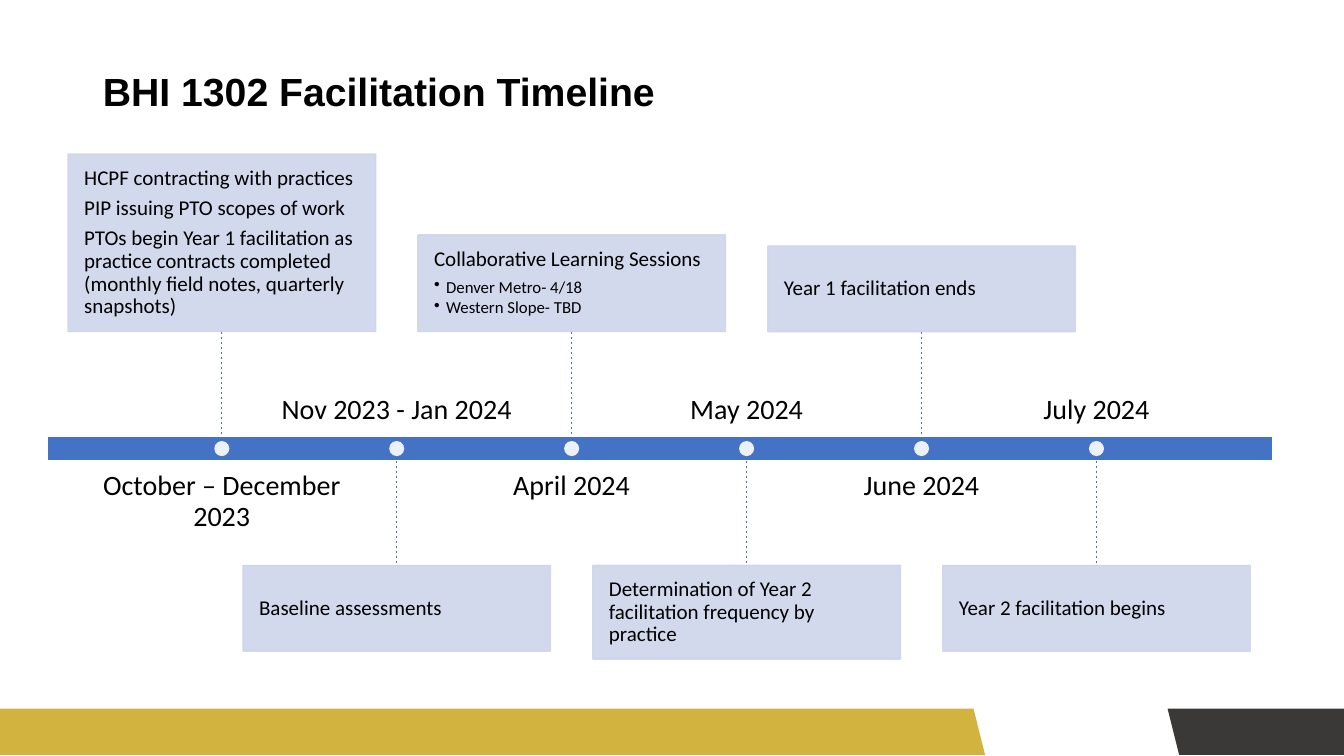
"""Build the BHI 1302 facilitation timeline slide."""
from dataclasses import dataclass

from lxml.etree import SubElement
from pptx import Presentation
from pptx.dml.color import RGBColor as RGB
from pptx.enum.dml import MSO_LINE
from pptx.enum.shapes import MSO_CONNECTOR, MSO_SHAPE as SHAPE
from pptx.enum.text import MSO_ANCHOR as ANCHOR, PP_ALIGN as ALIGN
from pptx.oxml.ns import qn
from pptx.util import Inches, Pt


@dataclass(frozen=True)
class Theme:
    blue: RGB = RGB(0x44, 0x72, 0xC4)
    pale: RGB = RGB(0xCF, 0xD5, 0xEA)
    gold: RGB = RGB(0xD2, 0xB3, 0x3F)
    dark: RGB = RGB(0x3B, 0x38, 0x38)
    white: RGB = RGB(0xFF, 0xFF, 0xFF)
    black: RGB = RGB(0, 0, 0)
    head: str = "Arial"
    body: str = "Calibri"
    title: int = 28
    date: int = 20
    item: int = 15
    bullet: int = 12


def add_block(kind, x, y, w, h, color, line=None, alpha=None):
    sp = s.shapes.add_shape(kind, Inches(x), Inches(y), Inches(w), Inches(h))
    sp.shadow.inherit = False
    sp.fill.solid()
    sp.fill.fore_color.rgb = color
    if line is None:
        sp.line.fill.background()
    else:
        sp.line.color.rgb = line
        sp.line.width = Pt(1)
    if alpha:
        for clr in sp._element.spPr.iter(qn("a:srgbClr")):
            SubElement(clr, qn("a:alpha"), val=str(alpha * 1000))
    return sp


def write(sp, paragraphs, anchor, align, inset=0):
    tf = sp.text_frame
    tf.word_wrap = True
    tf.vertical_anchor = anchor
    tf.margin_left = tf.margin_right = tf.margin_top = tf.margin_bottom = Inches(inset)
    for i, (text, size) in enumerate(paragraphs):
        p = tf.paragraphs[0] if i == 0 else tf.add_paragraph()
        share = 0.35
        if size == T.bullet:
            share = 0.15
            p.level = 1
            pPr = p._p.get_or_add_pPr()
            pPr.set("marL", str(Inches(0.12)))
            pPr.set("indent", str(-Inches(0.12)))
            SubElement(pPr, qn("a:buChar"), char="•")
        p.alignment = align
        p.line_spacing = 0.9
        p.space_after = Pt(size * share)
        r = p.add_run()
        r.text = text
        r.font.size = Pt(size)
        r.font.name = T.body
        r.font.color.rgb = T.black


T = Theme()
prs = Presentation()
prs.slide_width, prs.slide_height = Inches(13.33), Inches(7.5)
s = prs.slides.add_slide(prs.slide_layouts[5])

for x, w, color in ((-0.35, 10.12, T.gold), (11.58, 2.13, T.dark)):
    sp = add_block(SHAPE.PARALLELOGRAM, x, 7.03, w, 0.46, color)
    sp._element.spPr.xfrm.set("flipV", "1")

title = s.shapes.title
title.left, title.top, title.width, title.height = map(Inches, (0.92, 0.4, 11.5, 1.06))
tf = title.text_frame
tf.vertical_anchor = ANCHOR.MIDDLE
p = tf.paragraphs[0]
p.alignment = ALIGN.LEFT
p.line_spacing = 0.9
r = p.add_run()
r.text = "BHI 1302 Facilitation Timeline"
r.font.size = Pt(T.title)
r.font.name = T.head
r.font.bold = True
r.font.color.rgb = T.black

FIRST, COL = 2.2, 1.735
BAR_TOP, BAR_H = 4.33, 0.24
BAR_END = BAR_TOP + BAR_H
STEM, BOX_W, DATE_W, DATE_H, DATE_GAP, DOT = 1.04, 3.05, 2.78, 0.69, 0.11, 0.15

add_block(SHAPE.RECTANGLE, 0.47, BAR_TOP, 12.15, BAR_H, T.blue, T.white)

events = [
    ("October – December 2023", 1.76, [
        ("HCPF contracting with practices", T.item),
        ("PIP issuing PTO scopes of work", T.item),
        ("PTOs begin Year 1 facilitation as practice contracts completed "
         "(monthly field notes, quarterly snapshots)", T.item)]),
    ("Nov 2023 - Jan 2024", 0.85, [("Baseline assessments", T.item)]),
    ("April 2024", 0.96, [
        ("Collaborative Learning Sessions", T.item),
        ("Denver Metro- 4/18", T.bullet),
        ("Western Slope- TBD", T.bullet)]),
    ("May 2024", 0.93, [
        ("Determination of Year 2 facilitation frequency by practice", T.item)]),
    ("June 2024", 0.85, [("Year 1 facilitation ends", T.item)]),
    ("July 2024", 0.85, [("Year 2 facilitation begins", T.item)]),
]

for i, (date, box_h, items) in enumerate(events):
    cx = FIRST + i * COL
    if i % 2 == 0:
        stem_top, box_top = BAR_TOP - STEM, BAR_TOP - STEM - box_h
        date_top, date_anchor = BAR_END + DATE_GAP, ANCHOR.TOP
    else:
        stem_top, box_top = BAR_END, BAR_END + STEM
        date_top, date_anchor = BAR_TOP - DATE_GAP - DATE_H, ANCHOR.BOTTOM

    label = s.shapes.add_textbox(Inches(cx - DATE_W / 2), Inches(date_top),
                                 Inches(DATE_W), Inches(DATE_H))
    write(label, [(date, T.date)], date_anchor, ALIGN.CENTER)

    box = add_block(SHAPE.RECTANGLE, cx - BOX_W / 2, box_top, BOX_W, box_h,
                    T.pale, T.pale, 90)
    write(box, items, ANCHOR.MIDDLE, ALIGN.LEFT, 0.16)

    stem = s.shapes.add_connector(MSO_CONNECTOR.STRAIGHT, Inches(cx), Inches(stem_top),
                                  Inches(cx), Inches(stem_top + STEM))
    stem.line.color.rgb = T.blue
    stem.line.width = Pt(0.5)
    stem.line.dash_style = MSO_LINE.DASH
    SubElement(stem._element.spPr, qn("a:effectLst"))

    add_block(SHAPE.OVAL, cx - DOT / 2, BAR_TOP + (BAR_H - DOT) / 2, DOT, DOT,
              T.white, alpha=90)

prs.save("out.pptx")
